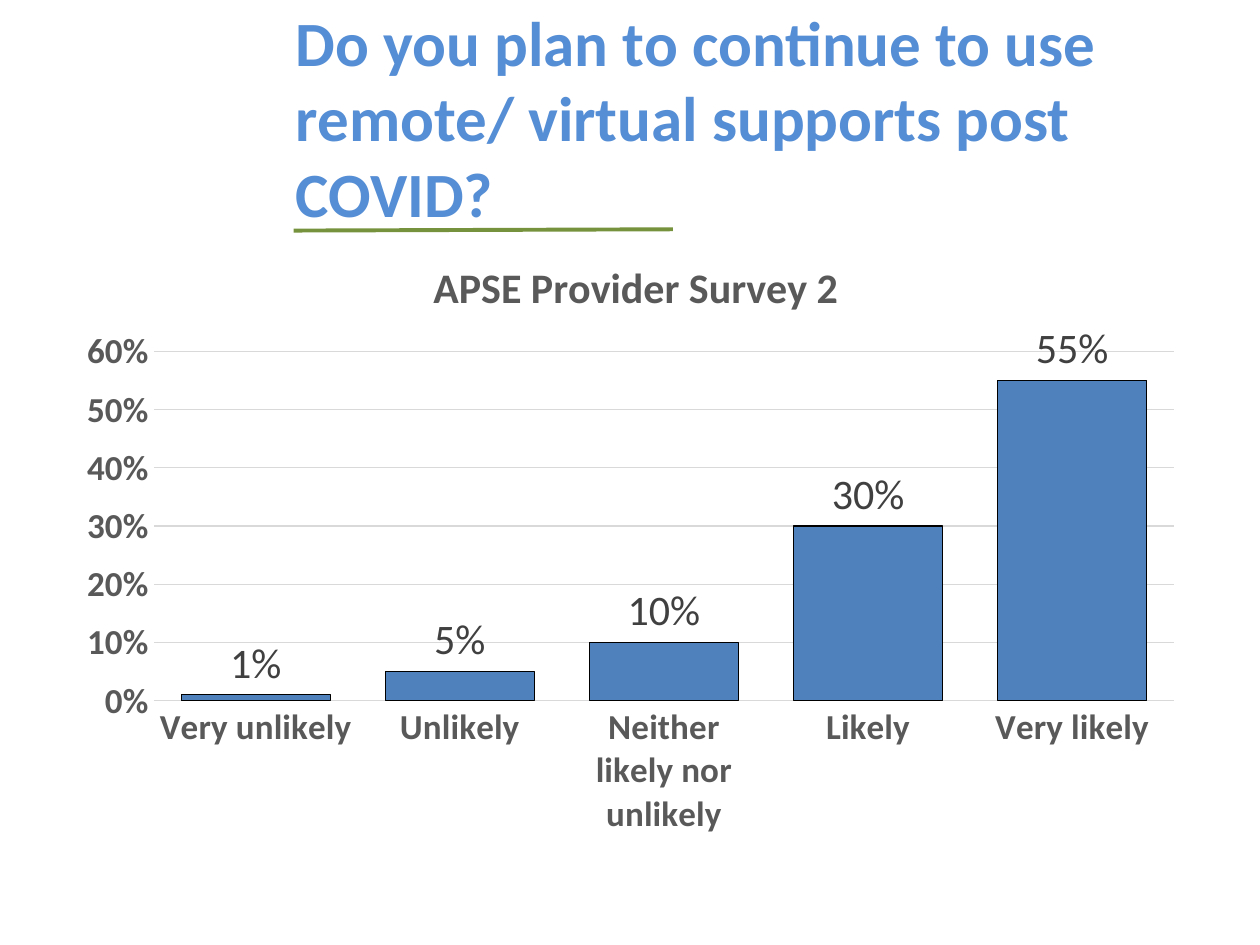
from dataclasses import dataclass

from lxml.etree import SubElement
from pptx import Presentation
from pptx.chart.data import CategoryChartData
from pptx.dml.color import RGBColor
from pptx.enum.chart import XL_CHART_TYPE as ChartType
from pptx.enum.chart import XL_LABEL_POSITION as LabelPosition
from pptx.enum.chart import XL_TICK_MARK as TickMark
from pptx.enum.shapes import MSO_CONNECTOR as Connector
from pptx.enum.text import MSO_ANCHOR as Anchor
from pptx.oxml import parse_xml
from pptx.oxml.ns import nsdecls, qn
from pptx.util import Inches, Pt


@dataclass(frozen=True)
class Theme:
    font: str = "Calibri"
    heading: str = "558ED5"
    rule: str = "76923C"
    bar: str = "4F81BD"
    outline: str = "000000"
    grid: str = "D9D9D9"
    axis_text: str = "595959"
    label_text: str = "404040"
    heading_size: int = 36
    chart_title_size: int = 24
    label_size: int = 24
    axis_size: int = 20
    rule_width: float = 2.25
    thin_width: float = 0.75


class SlideBuilder:
    def __init__(self, slide, theme):
        self.slide = slide
        self.theme = theme

    def set_values(self, target, values):
        for name, value in values.items():
            setattr(target, name, value)

    def style_font(self, font, size, color, bold=False):
        self.set_values(font, {"name": self.theme.font, "size": Pt(size), "bold": bold})
        font.color.rgb = RGBColor.from_string(color)

    def style_line(self, line, color, width):
        line.color.rgb = RGBColor.from_string(color)
        line.width = Pt(width)

    def place_chart_part(self, element, index, **layout):
        for old_layout in element.findall(qn("c:layout")):
            element.remove(old_layout)
        entries = "".join(f'<c:{name} val="{value}"/>' for name, value in layout.items())
        element.insert(index, parse_xml(
            f'<c:layout {nsdecls("c")}><c:manualLayout>{entries}</c:manualLayout></c:layout>'))

    def add_heading(self, text, left, top, width, height):
        shape = self.slide.shapes.add_textbox(
            Inches(left), Inches(top), Inches(width), Inches(height))
        frame = shape.text_frame
        self.set_values(frame, {"word_wrap": True, "vertical_anchor": Anchor.MIDDLE})
        paragraph = frame.paragraphs[0]
        paragraph.text = text
        self.style_font(paragraph.runs[0].font, self.theme.heading_size,
                        self.theme.heading, True)

    def add_rule(self, start, end):
        points = [Inches(value) for value in (*start, *end)]
        connector = self.slide.shapes.add_connector(Connector.STRAIGHT, *points)
        self.style_line(connector.line, self.theme.rule, self.theme.rule_width)
        SubElement(connector._element.spPr, qn("a:effectLst"))

    def add_column_chart(self, title, responses, left, top, width, height):
        theme = self.theme
        data = CategoryChartData(number_format="0%")
        data.categories = list(responses)
        data.add_series("Series 1", list(responses.values()))
        chart = self.slide.shapes.add_chart(
            ChartType.COLUMN_CLUSTERED, Inches(left), Inches(top),
            Inches(width), Inches(height), data).chart
        self.style_font(chart.font, theme.axis_size, theme.outline)
        self.set_values(chart, {"has_legend": False, "has_title": True})

        paragraph = chart.chart_title.text_frame.paragraphs[0]
        paragraph.text = title
        self.style_font(paragraph.runs[0].font, theme.chart_title_size,
                        theme.axis_text, True)
        self.place_chart_part(chart.chart_title._element, 1,
                              xMode="edge", yMode="edge", x=0.32, y=0.05)
        self.place_chart_part(chart._chartSpace.chart.plotArea, 0,
                              layoutTarget="inner", xMode="edge", yMode="edge",
                              x=0.08, y=0.21, w=0.9, h=0.56)

        for axis in (chart.category_axis, chart.value_axis):
            self.set_values(axis, {"major_tick_mark": TickMark.NONE,
                                   "minor_tick_mark": TickMark.NONE})
            self.style_font(axis.tick_labels.font, theme.axis_size, theme.axis_text, True)
        self.style_line(chart.category_axis.format.line, theme.grid, theme.thin_width)
        value_axis = chart.value_axis
        self.set_values(value_axis, {"minimum_scale": 0, "maximum_scale": 0.6,
                                     "major_unit": 0.1, "has_major_gridlines": True})
        value_axis.format.line.fill.background()
        self.style_line(value_axis.major_gridlines.format.line, theme.grid, theme.thin_width)
        number_format = {"number_format": "0%", "number_format_is_linked": False}
        self.set_values(value_axis.tick_labels, number_format)

        plot = chart.plots[0]
        self.set_values(plot, {"gap_width": 37, "overlap": -27,
                               "vary_by_categories": False})
        series = plot.series[0]
        series.format.fill.solid()
        series.format.fill.fore_color.rgb = RGBColor.from_string(theme.bar)
        self.style_line(series.format.line, theme.outline, theme.thin_width)
        labels = series.data_labels
        self.set_values(labels, {"show_value": True, "position": LabelPosition.OUTSIDE_END,
                                 **number_format})
        self.style_font(labels.font, theme.label_size, theme.label_text)


def main():
    presentation = Presentation()
    presentation.slide_width = Inches(10)
    presentation.slide_height = Inches(7.5)
    slide = presentation.slides.add_slide(presentation.slide_layouts[6])
    builder = SlideBuilder(slide, Theme())

    builder.add_heading(
        "Do you plan to continue to use remote/ virtual supports post COVID?",
        2.25, 0.3, 7.67, 1.25)
    responses = {
        "Very unlikely": 0.01,
        "Unlikely": 0.05,
        "Neither likely nor unlikely": 0.1,
        "Likely": 0.3,
        "Very likely": 0.55,
    }
    builder.add_column_chart("APSE Provider Survey 2", responses, 0.5, 1.75, 9, 4.95)
    builder.add_rule((2.33, 1.83), (5.34, 1.82))
    presentation.save("out.pptx")


if __name__ == "__main__":
    main()
